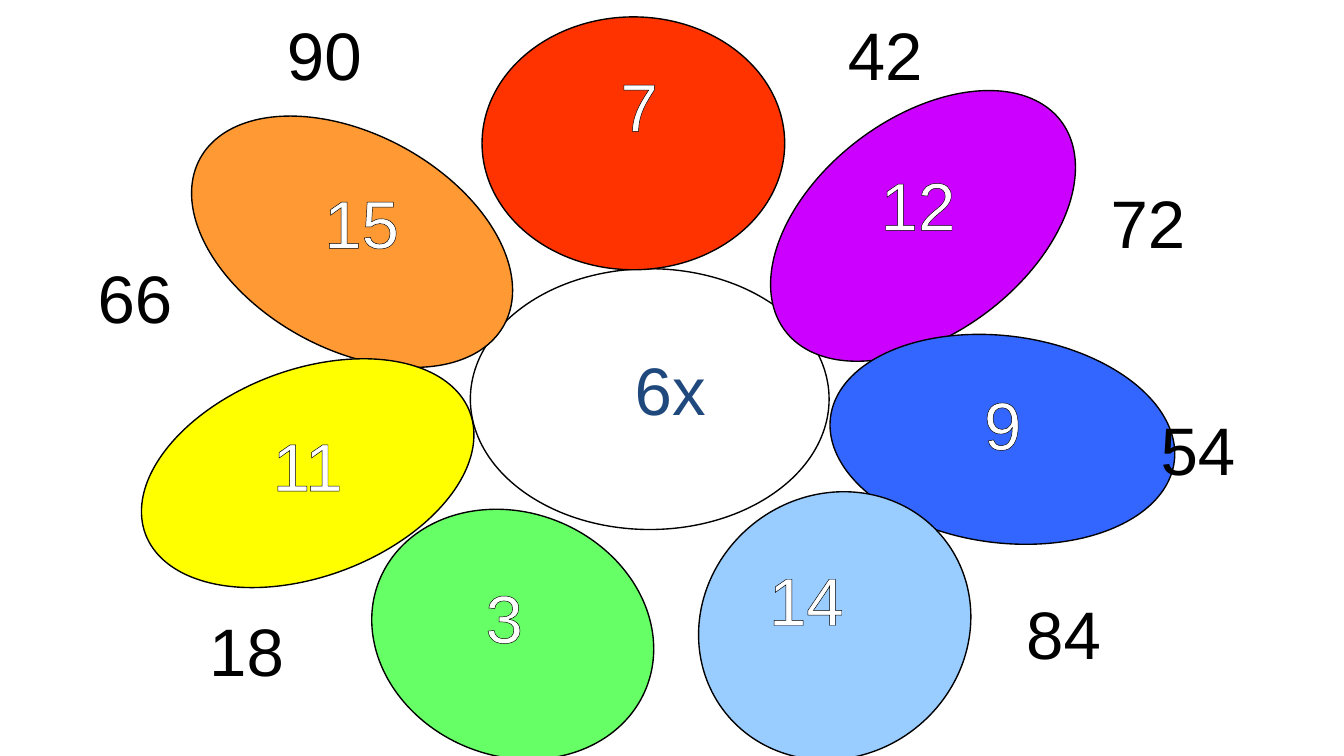
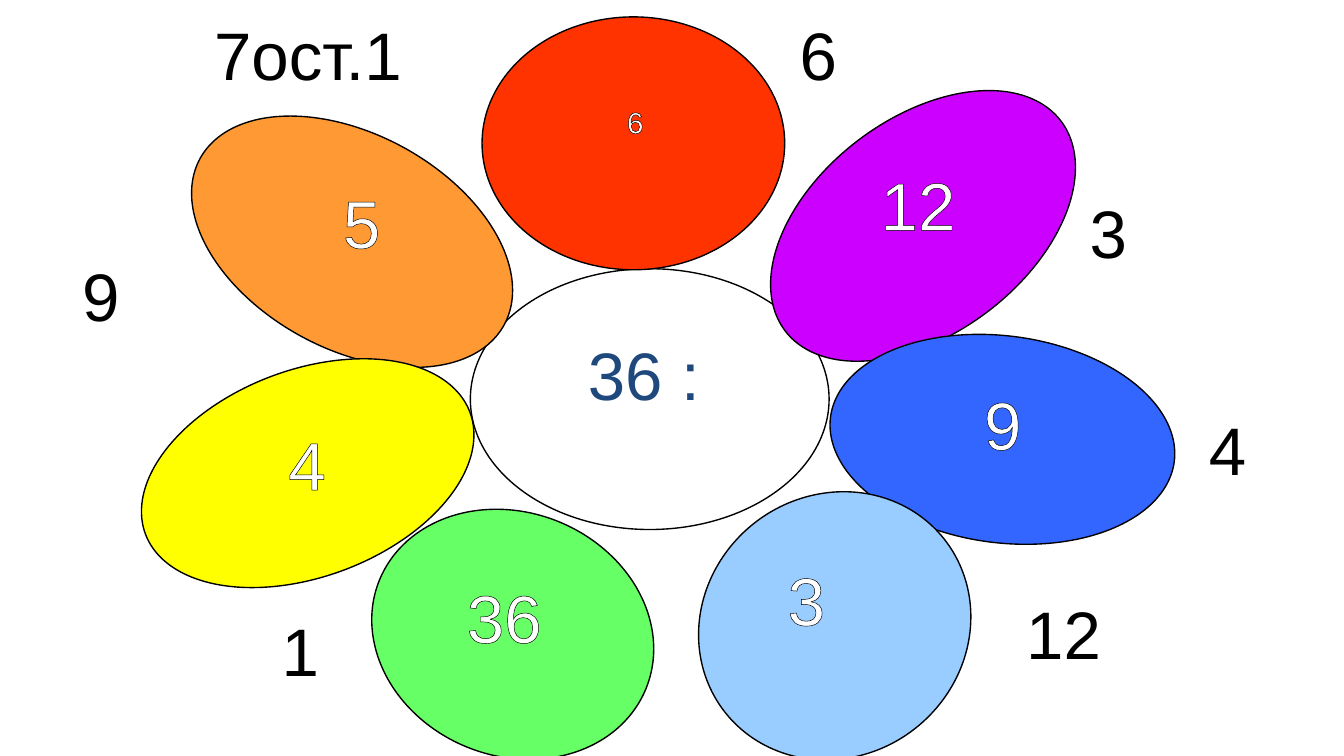
import pptx
import pptx.dml.color
import pptx.enum.shapes
import pptx.enum.text
import pptx.util
from lxml import etree
from pptx.oxml.ns import qn
from pptx.util import Cm

BLACK, WHITE, NAVY = "000000", "FFFFFF", "1F497D"

# The flower: fill, (left, top, width, height) in cm, rotation
HEART = (WHITE, (8.89, 5.08, 6.78, 4.93), 0)
PETALS = [
    ("CC00FF", (14.17, 2.24, 6.55, 4.06), 322.7),
    ("3366FF", (15.67, 6.35, 6.55, 3.91), 7.4),
    ("99CCFF", (13.31, 9.19, 4.93, 5.28), 51.3),
    ("FF3300", (9.58, -0.15, 4.78, 5.72), 90),
    ("FF9933", (3.38, 2.54, 6.55, 4.06), 28.7),
    ("66FF66", (7.39, 9.27, 4.6, 5.44), 292.1),
    ("FFFF00", (2.54, 6.99, 6.55, 3.91), 339.4),
]

# Number places that both slides use
PURPLE_PLACE = (16.08, 2.84, 2.54, 2.54)
BLUE_PLACE = (17.78, 6.99, 2.34, 2.69)
SKY_PLACE = (13.97, 10.31, 2.54, 2.54)
GREEN_PLACE = (8.26, 10.64, 2.54, 2.69)
ORANGE_PLACE = (4.65, 3.18, 4.01, 2.69)
ANSWER_SIZE = (4.24, 3.02)
SKY_ANSWER_PLACE = (17.98, 10.95, *ANSWER_SIZE)


def rgb(value):
    return pptx.dml.color.RGBColor.from_string(value)


class FlowerDeck:
    font_name = "Arial"
    font_size = 36
    line_width = 0.75
    inset = 0.25
    shift = 0.36  # moves a centred number slightly to the right

    def __init__(self):
        self.deck = pptx.Presentation()
        self.deck.slide_width = Cm(25.4)
        self.deck.slide_height = Cm(14.29)
        self.page = None

    def add_page(self):
        self.page = self.deck.slides.add_slide(self.deck.slide_layouts[6])

    def add_ellipse(self, fill, place, rotation):
        ellipse = self.page.shapes.add_shape(
            pptx.enum.shapes.MSO_SHAPE.OVAL, *map(Cm, place))
        ellipse.rotation = rotation
        ellipse.shadow.inherit = False
        ellipse.fill.solid()
        ellipse.fill.fore_color.rgb = rgb(fill)
        ellipse.line.color.rgb = rgb(BLACK)
        ellipse.line.width = pptx.util.Pt(self.line_width)

    def add_number(self, text, place, color, size=font_size, shift=0):
        box = self.page.shapes.add_textbox(*map(Cm, place))
        frame = box.text_frame
        frame.word_wrap = False
        frame.margin_left = Cm(self.inset + shift)
        # Number sits lower by a tenth of its size
        frame.margin_top = Cm(0.13) + pptx.util.Pt(size * 0.09)
        para = frame.paragraphs[0]
        para.alignment = pptx.enum.text.PP_ALIGN.CENTER
        para.font.name = self.font_name
        para.font.size = pptx.util.Pt(size)
        para.font.color.rgb = rgb(color)
        span = para.add_run()
        span.text = text
        self.outline(span)

    def outline(self, span):
        line = etree.SubElement(span._r.get_or_add_rPr(), qn("a:ln"),
                                w=str(pptx.util.Pt(self.line_width)))
        fill = etree.SubElement(line, qn("a:solidFill"))
        etree.SubElement(fill, qn("a:srgbClr"), val=BLACK)

    def add_flower(self, heart, petals, answers):
        self.add_page()
        for ellipse in [HEART, *PETALS]:
            self.add_ellipse(*ellipse)
        for text, place, *style in petals:
            self.add_number(text, place, WHITE, *style)
        self.add_number(*heart, NAVY, shift=self.shift)
        for text, place in answers:
            self.add_number(text, place, BLACK)


def main():
    flowers = FlowerDeck()
    size, shift = flowers.font_size, flowers.shift

    # Multiplication by six
    flowers.add_flower(
        heart=("6х", (9.73, 6.35, 5.51, 2.46)),
        petals=[
            ("7", (9.96, 0.97, 4.24, 3.02)),
            ("12", PURPLE_PLACE),
            ("9", BLUE_PLACE),
            ("14", SKY_PLACE),
            ("3", GREEN_PLACE),
            ("11", (3.81, 7.77, 4.01, 2.39)),
            ("15", ORANGE_PLACE, size, shift),
        ],
        answers=[
            ("42", (14.61, 0, *ANSWER_SIZE)),
            ("72", (19.69, 3.18, 4.01, 2.84)),
            ("54", (20.52, 7.47, *ANSWER_SIZE)),
            ("84", SKY_ANSWER_PLACE),
            ("18", (2.54, 11.28, *ANSWER_SIZE)),
            ("66", (0.43, 4.6, *ANSWER_SIZE)),
            ("90", (4.01, 0, *ANSWER_SIZE)),
        ])

    # Division of thirty-six
    flowers.add_flower(
        heart=("36 :", (8.74, 6.05, 6.5, 3.56)),
        petals=[
            ("6", (10.72, 1.78, 2.57, 2.24), 16),
            ("12", PURPLE_PLACE),
            ("9", BLUE_PLACE),
            ("3", SKY_PLACE),
            ("36", GREEN_PLACE),
            ("4", (4.37, 7.75, 2.87, 2.74)),
            ("5", ORANGE_PLACE, size, shift),
        ],
        answers=[
            ("6", (13.89, 0, 3.15, 2.41)),
            ("3", (19.46, 3.38, 2.97, 2.84)),
            ("4", (21.64, 7.47, 3.12, 3.25)),
            ("12", SKY_ANSWER_PLACE),
            ("1", (4.57, 11.28, 2.21, 3.02)),
            ("9", (0.43, 4.57, 2.95, 3.05)),
            ("7ост.1", (3.38, 0, 4.88, 3.02)),
        ])

    flowers.deck.save("out.pptx")


if __name__ == "__main__":
    main()
